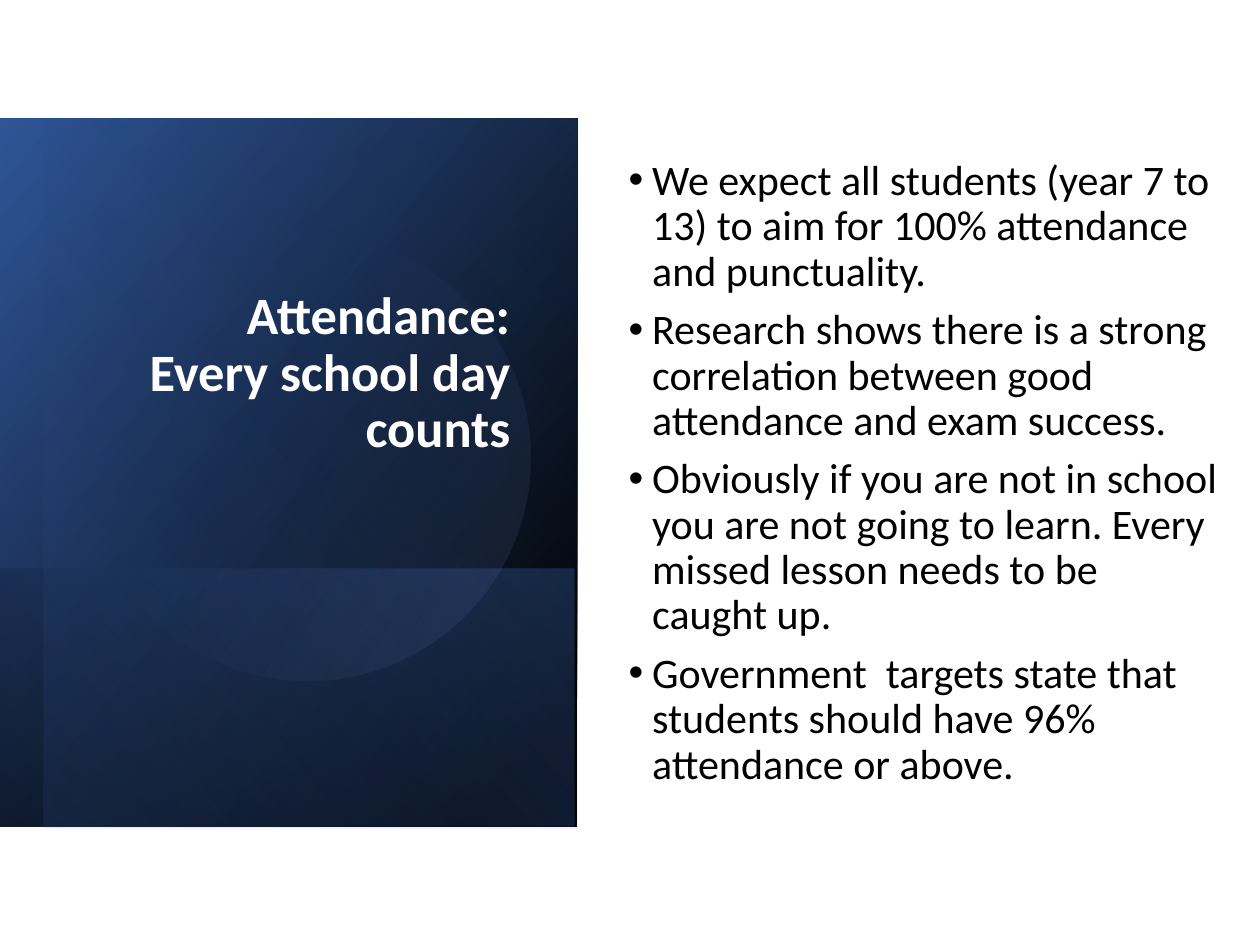
"""Build the school attendance slide with a layered gradient panel and a bullet list."""
from dataclasses import dataclass

from pptx import Presentation
from pptx.dml.color import RGBColor
from pptx.enum.shapes import MSO_SHAPE
from pptx.enum.text import MSO_ANCHOR, PP_ALIGN
from pptx.oxml import parse_xml
from pptx.oxml.ns import nsdecls
from pptx.slide import Slide
from pptx.text.text import TextFrame
from pptx.util import Pt

RECTANGLE, OVAL = MSO_SHAPE.RECTANGLE, MSO_SHAPE.OVAL
BOTTOM, MIDDLE = MSO_ANCHOR.BOTTOM, MSO_ANCHOR.MIDDLE
LEFT, RIGHT = PP_ALIGN.LEFT, PP_ALIGN.RIGHT


@dataclass(frozen=True)
class Theme:
    """Colours, font and type sizes of the slide."""
    font: str = "Calibri"
    title_size: float = 30
    body_size: float = 24
    title_color: str = "FFFFFF"
    dark: str = "000000"
    deep_blue: str = "2F5597"
    blue: str = "4472C4"
    light_blue: str = "8FAADC"


THEME = Theme()


@dataclass(frozen=True)
class Box:
    """A frame in points."""
    left: float
    top: float
    width: float
    height: float

    def lengths(self) -> tuple[Pt, Pt, Pt, Pt]:
        """Return the frame as slide lengths."""
        return Pt(self.left), Pt(self.top), Pt(self.width), Pt(self.height)


@dataclass(frozen=True)
class Stop:
    """A gradient stop with position and opacity in percent."""
    position: int
    color: str
    opacity: int = 100


@dataclass(frozen=True)
class Layer:
    """A rotated gradient shape of the title panel."""
    box: Box
    stops: tuple[Stop, Stop]
    angle: int
    rotation: float = 90
    outline: MSO_SHAPE = RECTANGLE
    flipped: bool = True


PANEL_LAYERS = (
    Layer(Box(-37.4, 105.1, 404.6, 329.8),
          (Stop(8, THEME.dark), Stop(100, THEME.deep_blue)), 50),
    Layer(Box(90, 234, 147.6, 329),
          (Stop(2, THEME.blue, 29), Stop(100, THEME.dark, 30)), 130),
    Layer(Box(-25.2, 118.1, 405.4, 304.6),
          (Stop(0, THEME.dark, 0), Stop(99, THEME.blue, 11)), 130),
    Layer(Box(48.2, 133.9, 254.9, 254.9),
          (Stop(39, THEME.blue, 0), Stop(100, THEME.light_blue, 15)), 290,
          rotation=101.6, outline=OVAL, flipped=False),
)

TITLE = "Attendance:\vEvery school day counts"
EXPECTATIONS = (
    "We expect all students (year 7 to 13) to aim for 100% attendance and punctuality.",
    "Research shows there is a strong correlation between good attendance and exam success.",
    "Obviously if you are not in school you are not going to learn. "
    "Every missed lesson needs to be caught up.",
    "Government  targets state that students should have 96% attendance or above.",
)
TITLE_BOX = Box(49, 102.2, 249.8, 200.2)
BODY_BOX = Box(352.1, 68.4, 353.5, 404.6)
TITLE_FRAME = {"word_wrap": True, "vertical_anchor": BOTTOM, "margin_bottom": Pt(40)}
BODY_FRAME = {"word_wrap": True, "vertical_anchor": MIDDLE}
BULLET_INDENT = Pt(13.5)
BULLET_GAP = Pt(7.5)


def apply_format(target: object, values: dict[str, object]) -> None:
    """Set each named attribute on the target."""
    for attribute, value in values.items():
        setattr(target, attribute, value)


def draw_layer(slide: Slide, layer: Layer) -> None:
    """Draw one gradient layer of the panel."""
    panel = slide.shapes.add_shape(layer.outline, *layer.box.lengths())
    panel.rotation = layer.rotation
    panel.shadow.inherit = False
    panel.line.fill.background()
    properties = panel.element.spPr
    if layer.flipped:
        properties.xfrm.set("flipH", "1")
    stops = "".join(
        f'<a:gs pos="{stop.position * 1000}"><a:srgbClr val="{stop.color}">'
        f'<a:alpha val="{stop.opacity * 1000}"/></a:srgbClr></a:gs>'
        for stop in layer.stops
    )
    gradient = parse_xml(
        f'<a:gradFill {nsdecls("a")} rotWithShape="1"><a:gsLst>{stops}</a:gsLst>'
        f'<a:lin ang="{layer.angle * 60000}" scaled="0"/></a:gradFill>'
    )
    properties.insert(2, gradient)


def add_text_frame(slide: Slide, box: Box, values: dict[str, object]) -> TextFrame:
    """Add a text box and return its formatted frame."""
    frame = slide.shapes.add_textbox(*box.lengths()).text_frame
    apply_format(frame, values)
    return frame


def write_paragraph(frame: TextFrame, index: int, text: str, align: PP_ALIGN,
                    size: float, color: str, bold: bool = False,
                    bulleted: bool = False) -> None:
    """Write one paragraph, bulleted if asked."""
    paragraph = frame.add_paragraph() if index else frame.paragraphs[0]
    paragraph.text = text
    apply_format(paragraph, {"alignment": align, "line_spacing": 0.9})
    if index:
        paragraph.space_before = BULLET_GAP
    if bulleted:
        properties = paragraph._p.get_or_add_pPr()
        properties.set("marL", str(BULLET_INDENT))
        properties.set("indent", str(-BULLET_INDENT))
        properties.append(parse_xml(f'<a:buFont {nsdecls("a")} typeface="Arial"/>'))
        properties.append(parse_xml(f'<a:buChar {nsdecls("a")} char="•"/>'))
    for run in paragraph.runs:
        apply_format(run.font, {"name": THEME.font, "size": Pt(size), "bold": bold})
        run.font.color.rgb = RGBColor.from_string(color)


def main() -> None:
    """Build and save the slide."""
    presentation = Presentation()
    apply_format(presentation, {"slide_width": Pt(720), "slide_height": Pt(540)})
    slide = presentation.slides.add_slide(presentation.slide_layouts[6])
    for layer in PANEL_LAYERS:
        draw_layer(slide, layer)
    title = add_text_frame(slide, TITLE_BOX, TITLE_FRAME)
    write_paragraph(title, 0, TITLE, RIGHT, THEME.title_size, THEME.title_color, bold=True)
    body = add_text_frame(slide, BODY_BOX, BODY_FRAME)
    for index, expectation in enumerate(EXPECTATIONS):
        write_paragraph(body, index, expectation, LEFT, THEME.body_size, THEME.dark,
                        bulleted=True)
    presentation.save("out.pptx")


if __name__ == "__main__":
    main()
